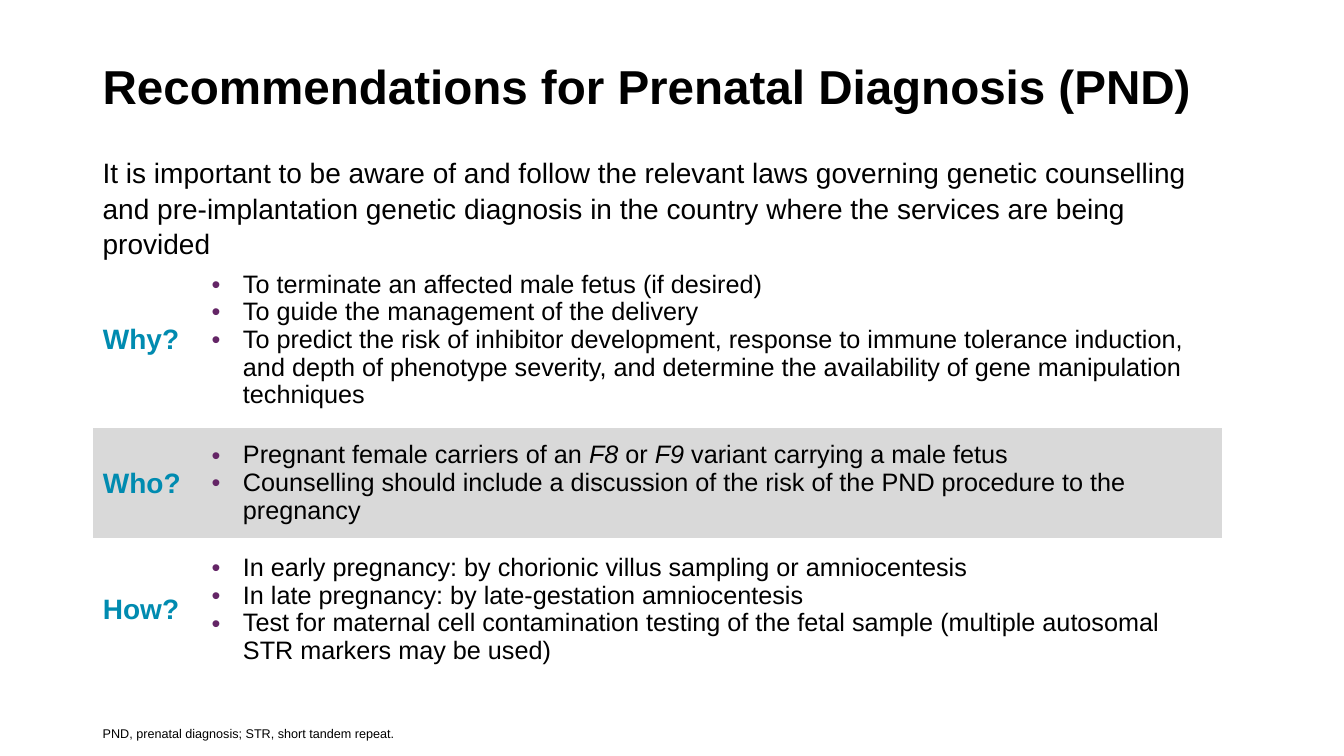
import pptx
import pptx.dml.color
import pptx.enum.text
import pptx.oxml.ns
import pptx.util
from lxml import etree
from pptx.util import Inches

ANCHOR = pptx.enum.text.MSO_ANCHOR
BLACK, TEAL, PURPLE, GREY, WHITE = "000000", "008BB0", "642566", "D9D9D9", "FFFFFF"
LEFT = 0.92
COLUMN_WIDTHS = (1.08, 10.12)

# Question, row height, fill, answers; asterisks enclose italics.
ROWS = [
    ("Why?", 1.75, WHITE, [
        "To terminate an affected male fetus (if desired)",
        "To guide the management of the delivery",
        "To predict the risk of inhibitor development, response to immune tolerance "
        "induction, and depth of phenotype severity, and determine the availability "
        "of gene manipulation techniques",
    ]),
    ("Who?", 1.09, GREY, [
        "Pregnant female carriers of an *F8* or *F9* variant carrying a male fetus",
        "Counselling should include a discussion of the risk of the PND procedure "
        "to the pregnancy",
    ]),
    ("How?", 1.42, WHITE, [
        "In early pregnancy: by chorionic villus sampling or amniocentesis",
        "In late pregnancy: by late-gestation amniocentesis",
        "Test for maternal cell contamination testing of the fetal sample "
        "(multiple autosomal STR markers may be used)",
    ]),
]


def rgb(value):
    return pptx.dml.color.RGBColor.from_string(value)


def set_font(para, size, color=BLACK, bold=False):
    para.font.name = "Arial"
    para.font.size = pptx.util.Pt(size)
    para.font.bold = bold
    para.font.color.rgb = rgb(color)


def add_text(slide, text, top, width, height, size, anchor, bold=False, spacing=1.0, bottom=0.05):
    box = slide.shapes.add_textbox(Inches(LEFT), Inches(top), Inches(width), Inches(height))
    frame = box.text_frame
    frame.word_wrap = True
    frame.vertical_anchor = anchor
    frame.margin_bottom = Inches(bottom)
    para = frame.paragraphs[0]
    para.text = text
    para.line_spacing = spacing
    set_font(para, size, bold=bold)


def add_bullet(para):
    properties = para._p.get_or_add_pPr()
    indent = Inches(0.31)
    properties.set("marL", str(indent))
    properties.set("indent", str(-indent))
    qn = pptx.oxml.ns.qn
    color = etree.SubElement(properties, qn("a:buClr"))
    etree.SubElement(color, qn("a:srgbClr"), val=PURPLE)
    etree.SubElement(properties, qn("a:buFont"), typeface="Arial")
    etree.SubElement(properties, qn("a:buChar"), char="•")


def fill_cell(cell, color):
    cell.fill.solid()
    cell.fill.fore_color.rgb = rgb(color)
    cell.vertical_anchor = ANCHOR.MIDDLE


def write_answers(cell, answers):
    frame = cell.text_frame
    for index, answer in enumerate(answers):
        para = frame.add_paragraph() if index else frame.paragraphs[0]
        para.line_spacing = 0.98
        add_bullet(para)
        set_font(para, 18)
        for part, text in enumerate(answer.split("*")):
            span = para.add_run()
            span.text = text
            if part % 2:
                span.font.italic = True


def add_question_table(slide):
    height = sum(row[1] for row in ROWS)
    frame = slide.shapes.add_table(len(ROWS), len(COLUMN_WIDTHS), Inches(LEFT), Inches(2.5),
                                   Inches(sum(COLUMN_WIDTHS)), Inches(height))
    table = frame.table
    table.first_row = False
    table.horz_banding = False
    # The "No Style, No Grid" table style has no borders.
    style = table._tbl.tblPr.find(pptx.oxml.ns.qn("a:tableStyleId"))
    style.text = "{2D5ABB26-0587-4C30-8999-92F81FD0307C}"
    for column, width in zip(table.columns, COLUMN_WIDTHS):
        column.width = Inches(width)
    for index, (question, row_height, fill, answers) in enumerate(ROWS):
        table.rows[index].height = Inches(row_height)
        question_cell, answer_cell = table.rows[index].cells
        fill_cell(question_cell, fill)
        fill_cell(answer_cell, fill)
        para = question_cell.text_frame.paragraphs[0]
        para.text = question
        set_font(para, 20, TEAL, bold=True)
        write_answers(answer_cell, answers)


def main():
    deck = pptx.Presentation()
    deck.slide_width, deck.slide_height = Inches(13.33), Inches(7.5)
    slide = deck.slides.add_slide(deck.slide_layouts[6])
    add_question_table(slide)
    add_text(slide, "Recommendations for Prenatal Diagnosis (PND)",
             0.25, 11.5, 1.19, 34, ANCHOR.MIDDLE, bold=True)
    add_text(slide, "PND, prenatal diagnosis; STR, short tandem repeat.",
             6.95, 10.85, 0.4, 9, ANCHOR.BOTTOM, bottom=0)
    add_text(slide, "It is important to be aware of and follow the relevant laws governing "
             "genetic counselling and pre-implantation genetic diagnosis in the country "
             "where the services are being provided",
             1.48, 11.2, 1.11, 20, ANCHOR.TOP, spacing=1.05)
    deck.save("out.pptx")


if __name__ == "__main__":
    main()
